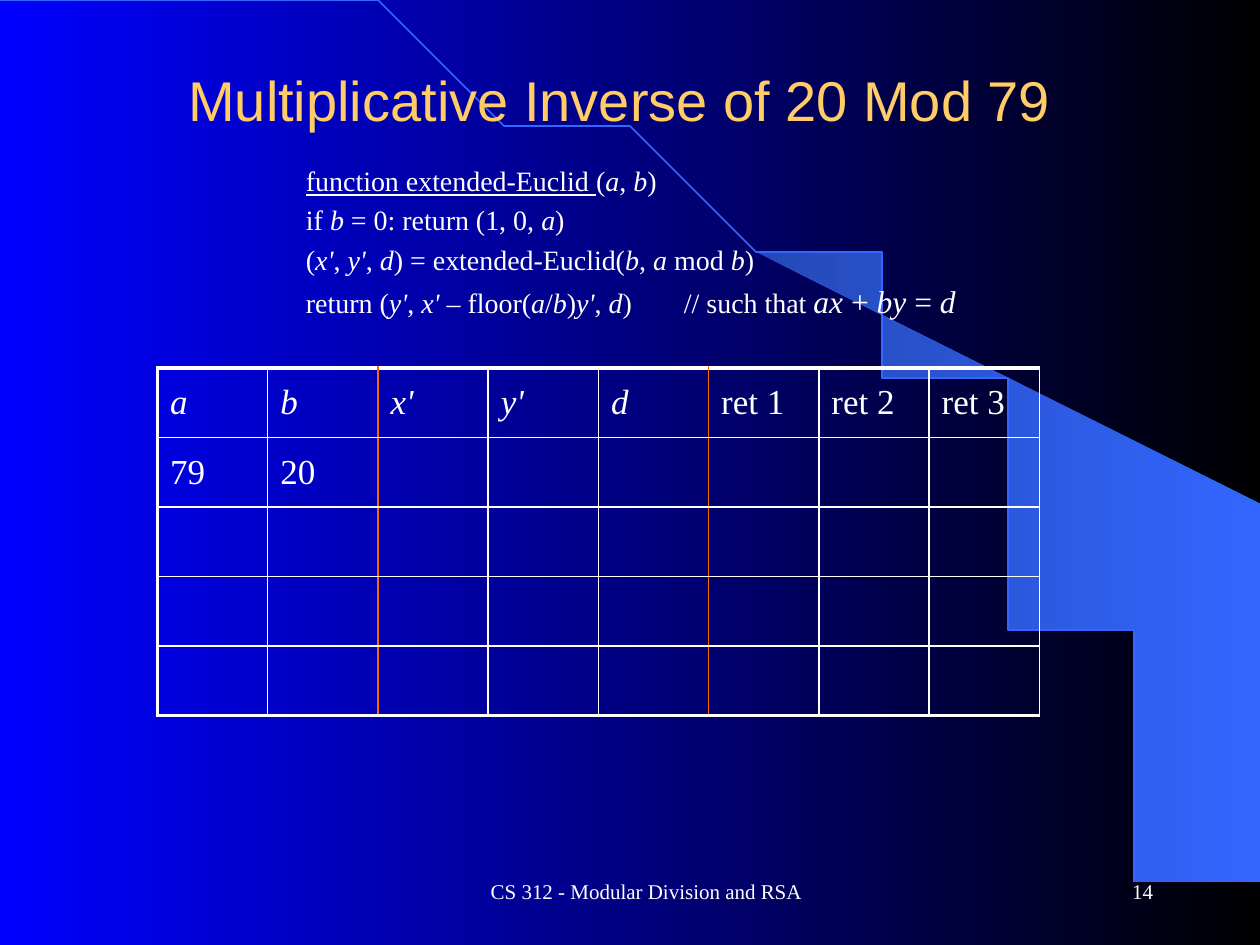
import math

from lxml import etree
from pptx import Presentation
from pptx import util as u
from pptx.dml.color import RGBColor
from pptx.enum import text
from pptx.oxml.ns import qn

W, H = 10, 7.5
SERIF, SANS = "Times New Roman", "Arial"
WHITE, ORANGE, GOLD, BLUE = "FFFFFF", "FF6600", "FFCC66", "3366FF"

# Each line is a list of (text, size, underlined); asterisks enclose italics.
CODE = [
    [("function extended-Euclid ", 16, True), ("(*a*, *b*)", 16, False)],
    [("if *b* = 0: return (1, 0, *a*)", 16, False)],
    [("(*x'*, *y'*, *d*) = extended-Euclid(*b*, *a *mod *b*)", 16, False)],
    [("return (*y'*, *x' *– floor(*a*/*b*)*y'*, *d*)\t// such that ", 16, False),
     ("*ax *+ *by *= *d*", 18, False)],
]
HEADERS = ["*a*", "*b*", "*x'*", "*y'*", "*d*", "ret 1", "ret 2", "ret 3"]
ROWS = [HEADERS, ["79", "20"], [], [], []]
ORANGE_EDGES = (2, 5)


def rgb(value):
    return RGBColor.from_string(value)


def set_gradient(fill, start, end):
    fill.gradient()
    fill.gradient_angle = 0
    for stop, color in zip(fill.gradient_stops, (start, end)):
        stop.color.rgb = rgb(color)


def style_run(r, size, color=WHITE, font=SERIF):
    r.font.size, r.font.name = u.Pt(size), font
    r.font.color.rgb = rgb(color)


def add_marked_text(p, marked, size, underline=False):
    """Append runs, with the parts between asterisks in italics."""
    for i, part in enumerate(marked.split("*")):
        if part:
            r = p.add_run()
            r.text = part
            style_run(r, size)
            r.font.italic = i % 2 == 1
            r.font.underline = underline


def add_outline(s, points, closed):
    builder = s.shapes.build_freeform(*points[0], scale=u.Inches(1))
    builder.add_line_segments(points[1:], close=closed)
    sp = builder.convert_to_shape()
    sp.shadow.inherit = False
    return sp


def add_backdrop(s, width, height):
    """Draw a quarter ellipse and the beam between it and the right edge."""
    set_gradient(s.background.fill, "0000FF", "000000")
    rx, ry = 0.92 * width, height - 0.01

    def arc(start, steps=60):
        angles = [start + (math.pi / 2 - start) * i / steps for i in range(steps + 1)]
        return [(rx * math.sin(a), ry * (1 - math.cos(a))) for a in angles]

    right = width - 0.01
    beam = add_outline(s, arc(math.asin(0.64)) + [(right, ry), (right, 4.23)], True)
    set_gradient(beam.fill, "2449B6", BLUE)
    beam.line.fill.background()

    curve = add_outline(s, arc(0), False)
    curve.fill.background()
    curve.line.color.rgb = rgb(BLUE)
    curve.line.width = u.Pt(1)


def add_title(s, box, title):
    sp = s.shapes.title
    s.shapes._spTree.append(sp._element)
    sp.left, sp.top, sp.width, sp.height = map(u.Inches, box)
    tf = sp.text_frame
    tf.text = title
    tf.auto_size = text.MSO_AUTO_SIZE.NONE
    tf.vertical_anchor = text.MSO_ANCHOR.MIDDLE
    p = tf.paragraphs[0]
    p.alignment = text.PP_ALIGN.CENTER
    style_run(p.runs[0], 32, GOLD, SANS)


def add_text_frame(s, box):
    tf = s.shapes.add_textbox(*map(u.Inches, box)).text_frame
    tf.word_wrap = True
    return tf


def add_footer(s, box, words, align):
    tf = add_text_frame(s, box)
    tf.text = words
    tf.vertical_anchor = text.MSO_ANCHOR.MIDDLE
    tf.paragraphs[0].alignment = align
    style_run(tf.paragraphs[0].runs[0], 12)


def add_code(s, box):
    tf = add_text_frame(s, box)
    for i, line in enumerate(CODE):
        p = tf.add_paragraph() if i else tf.paragraphs[0]
        p.level = 1
        p.space_before = u.Pt(0.2 * max(size for _, size, _ in line))
        pPr = p._p.get_or_add_pPr()
        pPr.set("marL", str(u.Inches(0.5)))
        pPr.set("indent", "0")
        for segment in line:
            add_marked_text(p, *segment)


def set_borders(cell, edges):
    """Set borders from (tag, colour, points); they must precede the fill."""
    tcPr = cell._tc.get_or_add_tcPr()
    for i, (tag, color, points) in enumerate(edges):
        ln = etree.Element(qn("a:" + tag), w=str(u.Pt(points)))
        fill = etree.SubElement(ln, qn("a:solidFill"))
        etree.SubElement(fill, qn("a:srgbClr"), val=color)
        tcPr.insert(i, ln)


def add_trace_table(s, box):
    n_rows, n_cols = len(ROWS), len(HEADERS)
    table = s.shapes.add_table(n_rows, n_cols, *map(u.Inches, box)).table
    table.first_row = table.horz_banding = False

    def column_edge(i):
        return ORANGE if i in ORANGE_EDGES else WHITE

    for r, row in enumerate(ROWS):
        for c in range(n_cols):
            cell = table.cell(r, c)
            cell.fill.background()
            cell.vertical_anchor = text.MSO_ANCHOR.MIDDLE
            set_borders(cell, [
                ("lnL", column_edge(c), 1 if c else 2.25),
                ("lnR", column_edge(c + 1), 1),
                ("lnT", WHITE, 1 if r else 2.25),
                ("lnB", WHITE, 1 if r < n_rows - 1 else 2.25),
            ])
            if c < len(row):
                p = cell.text_frame.paragraphs[0]
                p.space_before = u.Pt(4)
                add_marked_text(p, row[c], 20)


def main():
    prs = Presentation()
    prs.slide_width, prs.slide_height = u.Inches(W), u.Inches(H)
    s = prs.slides.add_slide(prs.slide_layouts[5])
    add_backdrop(s, W, H)
    footer_top = 0.91 * H
    add_footer(s, (3.17, footer_top, 3.92, 0.5),
               "CS 312 - Modular Division and RSA", text.PP_ALIGN.CENTER)
    add_footer(s, (7.17, footer_top, 2.08, 0.5), "14", text.PP_ALIGN.RIGHT)
    add_title(s, (0.67, 0.33, 0.85 * W, 0.92), "Multiplicative Inverse of 20 Mod 79")
    add_trace_table(s, (W / 8, 2.92, 0.7 * W, 2.76))
    add_code(s, (1.83, H / 6, 6.92, 1.38))
    prs.save("out.pptx")


if __name__ == "__main__":
    main()
